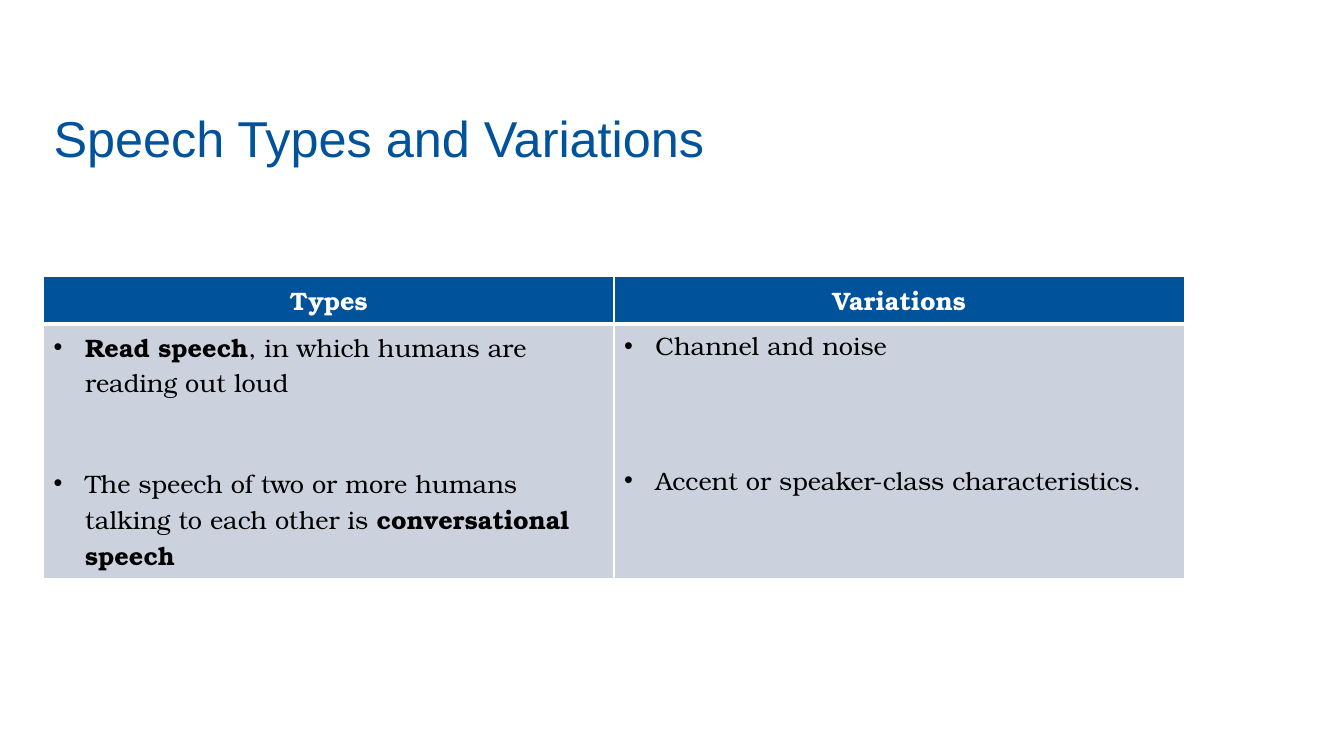
from lxml import etree
from pptx import Presentation
from pptx.dml.color import RGBColor
from pptx.enum import text
from pptx.oxml import ns
from pptx.util import Cm, Pt

COLORS = {"blue": "00529B", "body": "CCD1DE", "white": "FFFFFF", "black": "000000"}
TITLE_FONT = "Arial"
TABLE_FONT = "TeX Gyre Bonum"
HEADERS = ["Types", "Variations"]
# Each column: the gap before its second item, then items as (text, bold) runs.
COLUMNS = [
    (Pt(48), [
        [("Read speech", True), (", in which humans are reading out loud", False)],
        [("The speech of two or more humans talking to each other is ", False),
         ("conversational speech", True)],
    ]),
    (Pt(72), [
        [("Channel and noise", False)],
        [("Accent or speaker-class characteristics.", False)],
    ]),
]


def style_run(run, name, size, color, bold=False):
    run.font.name = name
    run.font.size = Pt(size)
    run.font.bold = bold
    run.font.color.rgb = RGBColor.from_string(COLORS[color])


def style_cell(cell, fill, top, bottom):
    """Fill the cell and give it white borders, with top and bottom widths in points."""
    properties = cell._tc.get_or_add_tcPr()
    for side, width in (("L", 1), ("R", 1), ("T", top), ("B", bottom)):
        line = etree.SubElement(properties, ns.qn(f"a:ln{side}"), w=str(Pt(width)))
        solid = etree.SubElement(line, ns.qn("a:solidFill"))
        etree.SubElement(solid, ns.qn("a:srgbClr"), val=COLORS["white"])
    cell.fill.solid()
    cell.fill.fore_color.rgb = RGBColor.from_string(COLORS[fill])


def add_bullet(paragraph):
    properties = paragraph._p.get_or_add_pPr()
    properties.set("marL", str(Cm(0.79)))
    properties.set("indent", str(-Cm(0.79)))
    etree.SubElement(properties, ns.qn("a:buFont"), typeface="Arial")
    etree.SubElement(properties, ns.qn("a:buChar"), char="•")


def add_title(slide, left, top, width, height):
    frame = slide.shapes.add_textbox(left, top, width, height).text_frame
    frame.word_wrap = True
    frame.margin_top = Cm(0.28)
    frame.text = "Speech Types and Variations"
    style_run(frame.paragraphs[0].runs[0], TITLE_FONT, 36, "blue")


def fill_header(cell, label):
    style_cell(cell, "blue", 1, 3)
    cell.text_frame.text = label
    paragraph = cell.text_frame.paragraphs[0]
    paragraph.alignment = text.PP_ALIGN.CENTER
    style_run(paragraph.runs[0], TABLE_FONT, 18, "white", True)


def fill_body(cell, gap, items):
    style_cell(cell, "body", 3, 1)
    frame = cell.text_frame
    for index, item in enumerate(items):
        paragraph = frame.add_paragraph() if index else frame.paragraphs[0]
        if index:
            paragraph.space_before = gap
        add_bullet(paragraph)
        for words, bold in item:
            run = paragraph.add_run()
            run.text = words
            style_run(run, TABLE_FONT, 18, "black", bold)


def add_speech_table(slide, left, top, width, height):
    table = slide.shapes.add_table(2, len(HEADERS), left, top, width, height).table
    header_height = Cm(1.19)
    table.rows[0].height = header_height
    table.rows[1].height = height - header_height
    for column, (label, (gap, items)) in enumerate(zip(HEADERS, COLUMNS)):
        fill_header(table.cell(0, column), label)
        fill_body(table.cell(1, column), gap, items)


def main():
    presentation = Presentation()
    presentation.slide_width = Cm(33.87)
    presentation.slide_height = Cm(19.05)
    slide = presentation.slides.add_slide(presentation.slide_layouts[6])
    add_speech_table(slide, Cm(1.1), Cm(6.97), Cm(28.75), Cm(7.42))
    add_title(slide, Cm(1.1), Cm(2.41), Cm(28), Cm(3.1))
    presentation.save("out.pptx")


if __name__ == "__main__":
    main()
